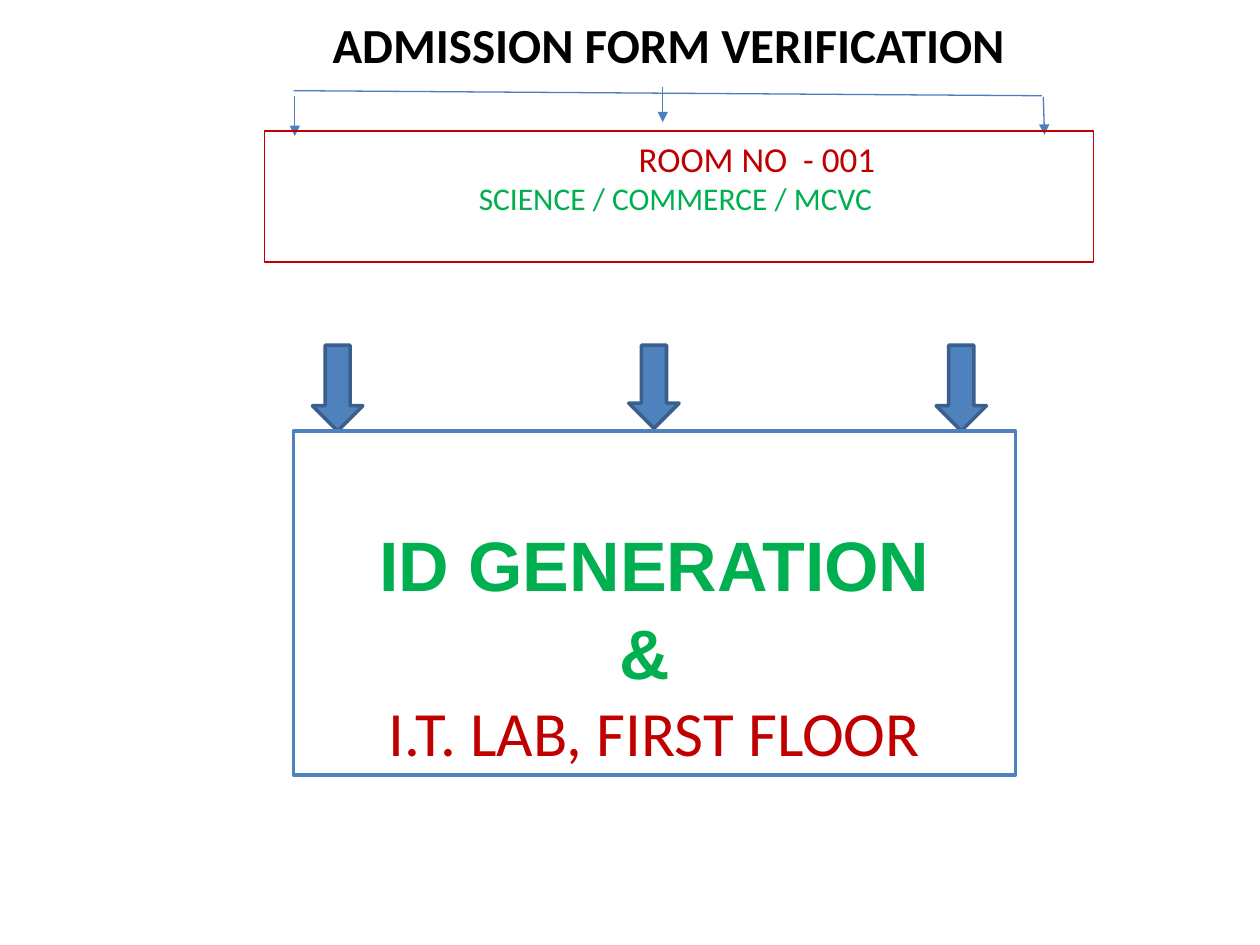
from lxml import etree
from pptx import Presentation
from pptx import util as u
from pptx.dml.color import RGBColor
from pptx.enum import shapes, text
from pptx.oxml.ns import qn

COLORS = {
    "black": "000000", "white": "FFFFFF", "red": "C00000", "green": "00B050",
    "blue": "4F81BD", "dark_blue": "3A5F8C", "line_blue": "4B7EBC",
}
LEFT, CENTER = text.PP_ALIGN.LEFT, text.PP_ALIGN.CENTER


def color(name):
    return RGBColor.from_string(COLORS[name])


def set_line(item, name, width):
    item.line.color.rgb = color(name)
    item.line.width = u.Pt(width)


def write_para(para, words, size, ink, font="Calibri", bold=False,
               align=CENTER, indent=0, before=0):
    para.alignment = align
    para.space_before = u.Pt(before)
    if indent:
        para._p.get_or_add_pPr().set("marL", str(u.Inches(indent)))
    span = para.add_run()
    span.text = words
    values = {"name": font, "size": u.Pt(size), "bold": bold}
    for key, value in values.items():
        setattr(span.font, key, value)
    span.font.color.rgb = color(ink)


def write_text(item, paras, anchor):
    frame = item.text_frame
    values = {"word_wrap": True, "auto_size": text.MSO_AUTO_SIZE.NONE,
              "vertical_anchor": anchor}
    for key, value in values.items():
        setattr(frame, key, value)
    for index, para_format in enumerate(paras):
        para = frame.add_paragraph() if index else frame.paragraphs[0]
        write_para(para, **para_format)


def add_title(page, place, **para_format):
    title = page.shapes.title
    for key, value in zip(("left", "top", "width", "height"), place):
        setattr(title, key, u.Inches(value))
    write_text(title, [para_format], text.MSO_ANCHOR.MIDDLE)


def add_shape(page, kind, place, fill, line, width):
    shape = page.shapes.add_shape(kind, *map(u.Inches, place))
    shape.shadow.inherit = False
    if fill:
        shape.fill.solid()
        shape.fill.fore_color.rgb = color(fill)
    else:
        shape.fill.background()
    set_line(shape, line, width)
    return shape


def add_line(page, start, end, arrow=True):
    line = page.shapes.add_connector(
        shapes.MSO_CONNECTOR.STRAIGHT, *map(u.Inches, start + end))
    set_line(line, "line_blue", 0.75)
    if arrow:
        etree.SubElement(line.line._get_or_add_ln(), qn("a:tailEnd"), type="triangle")
    etree.SubElement(line._element.spPr, qn("a:effectLst"))


def main():
    deck = Presentation()
    deck.slide_width, deck.slide_height = u.Inches(10), u.Inches(7.5)
    page = deck.slides.add_slide(deck.slide_layouts[5])

    # Heading
    add_title(page, (1.76, 0.06, 6.51, 0.57), words="ADMISSION FORM VERIFICATION",
              size=28, ink="black", bold=True, align=LEFT, indent=0.78)

    # Bar with three thin arrows down to the room
    add_line(page, (2.33, 0.72), (8.27, 0.76), arrow=False)
    for start, end in (((2.34, 0.76), (2.34, 1.08)),
                       ((5.26, 0.69), (5.26, 0.97)),
                       ((8.28, 0.77), (8.29, 1.07))):
        add_line(page, start, end)

    # Verification room
    room = add_shape(page, shapes.MSO_SHAPE.RECTANGLE, (2.1, 1.04, 6.58, 1.04),
                     None, "red", 0.75)
    write_text(room, [
        dict(words="ROOM NO  - 001", size=20, ink="red", align=LEFT, indent=2.87),
        dict(words="SCIENCE / COMMERCE / MCVC ", size=18, ink="green"),
    ], text.MSO_ANCHOR.TOP)

    # Block arrows
    for left, height in ((2.48, 0.68), (4.99, 0.66), (7.43, 0.68)):
        add_shape(page, shapes.MSO_SHAPE.DOWN_ARROW, (left, 2.74, 0.4, height),
                  "blue", "dark_blue", 2)

    # ID generation
    lab = add_shape(page, shapes.MSO_SHAPE.RECTANGLE, (2.33, 3.42, 5.73, 2.73),
                    "white", "blue", 2)
    strong = dict(size=40, ink="green", font="Arial", bold=True)
    write_text(lab, [
        dict(words="ID GENERATION", **strong),
        dict(words="& ", before=2, **strong),
        dict(words="I.T. LAB, FIRST FLOOR", size=36, ink="red"),
    ], text.MSO_ANCHOR.BOTTOM)

    deck.save("out.pptx")


if __name__ == "__main__":
    main()
